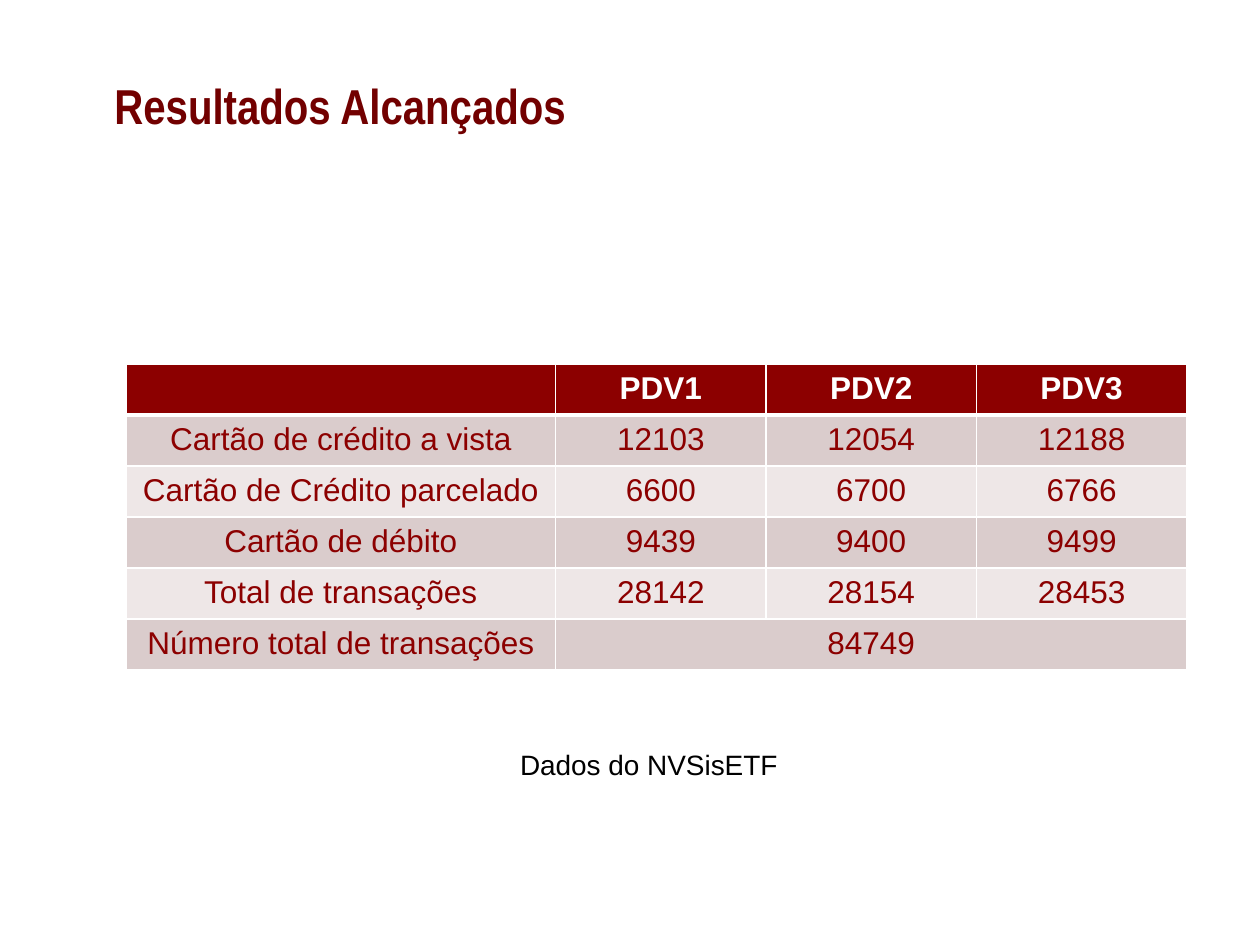
from dataclasses import dataclass
from pptx import Presentation, util as u
from pptx.dml.color import RGBColor
from pptx.enum import text as t
from pptx.oxml import parse_xml
from pptx.oxml.ns import nsdecls


@dataclass(frozen=True)
class Theme:
    title: str = "720000"
    head: str = "8C0000"
    bands: tuple = ("DACCCC", "EEE7E7")
    white: str = "FFFFFF"
    black: str = "000000"
    big: int = 28
    mid: int = 18
    small: int = 16
    face: str = "Arial"
    slim: str = "Arial Narrow"


@dataclass(frozen=True)
class Label:
    words: str
    box: tuple  # left, top, width, height in inches
    font: dict
    color: str
    align: t.PP_ALIGN
    wrap: bool


TH = Theme()
ROWS = [
    ("", "PDV1", "PDV2", "PDV3"),
    ("Cartão de crédito a vista", "12103", "12054", "12188"),
    ("Cartão de Crédito parcelado", "6600", "6700", "6766"),
    ("Cartão de débito", "9439", "9400", "9499"),
    ("Total de transações", "28142", "28154", "28453"),
    ("Número total de transações", "84749"),
]
COLS = (3.41, 1.67, 1.67, 1.67)
GRID = (1, 2.89, sum(COLS), 2.43)
LABELS = [
    Label("Resultados Alcançados", (0.81, 0.21, 7.97, 1.25),
          dict(name=TH.slim, size=u.Pt(TH.big), bold=True),
          TH.title, t.PP_ALIGN.LEFT, True),
    Label("Dados do NVSisETF", (3.98, 5.88, 2.34, 0.37),
          dict(name=TH.face, size=u.Pt(TH.small)),
          TH.black, t.PP_ALIGN.CENTER, False),
]


def write(frame, words: str, font: dict, color: str, align) -> None:
    par = frame.paragraphs[0]
    par.alignment = align
    run = par.add_run()
    run.text = words
    for key, val in font.items():
        setattr(run.font, key, val)
    run.font.color.rgb = RGBColor.from_string(color)


def draw_label(slide, lab: Label) -> None:
    frame = slide.shapes.add_textbox(*map(u.Inches, lab.box)).text_frame
    frame.word_wrap = lab.wrap
    frame.vertical_anchor = t.MSO_ANCHOR.MIDDLE
    write(frame, lab.words, lab.font, lab.color, lab.align)


def edge(cell, base: int) -> None:
    """Rule a cell in white; borders come before the fill in the XML."""
    props = cell._tc.get_or_add_tcPr()
    for at, (side, width) in enumerate(zip("LRTB", (1, 1, 1, base))):
        props.insert(at, parse_xml(
            f'<a:ln{side} {nsdecls("a")} w="{u.Pt(width)}"><a:solidFill>'
            f'<a:srgbClr val="{TH.white}"/></a:solidFill></a:ln{side}>'))


def draw_table(slide) -> None:
    grid = slide.shapes.add_table(
        len(ROWS), len(COLS), *map(u.Inches, GRID)).table
    for col, width in zip(grid.columns, COLS):
        col.width = u.Inches(width)
    # The grand total spans every terminal
    last = len(ROWS) - 1
    grid.cell(last, 1).merge(grid.cell(last, len(COLS) - 1))

    for r, row in enumerate(ROWS):
        head = r == 0
        fill = TH.head if head else TH.bands[(r - 1) % 2]
        font = dict(name=TH.face, size=u.Pt(TH.mid), bold=head)
        for c in range(len(COLS)):
            cell = grid.cell(r, c)
            cell.fill.solid()
            cell.fill.fore_color.rgb = RGBColor.from_string(fill)
            edge(cell, 3 if head else 1)
            if c < len(row) and row[c]:
                write(cell.text_frame, row[c], font,
                      TH.white if head else TH.head, t.PP_ALIGN.CENTER)


def main() -> None:
    deck = Presentation()
    deck.slide_width, deck.slide_height = u.Inches(10), u.Inches(7.5)
    slide = deck.slides.add_slide(deck.slide_layouts[6])
    # Title, results table, source note
    draw_label(slide, LABELS[0])
    draw_table(slide)
    draw_label(slide, LABELS[1])
    deck.save("out.pptx")


if __name__ == "__main__":
    main()
